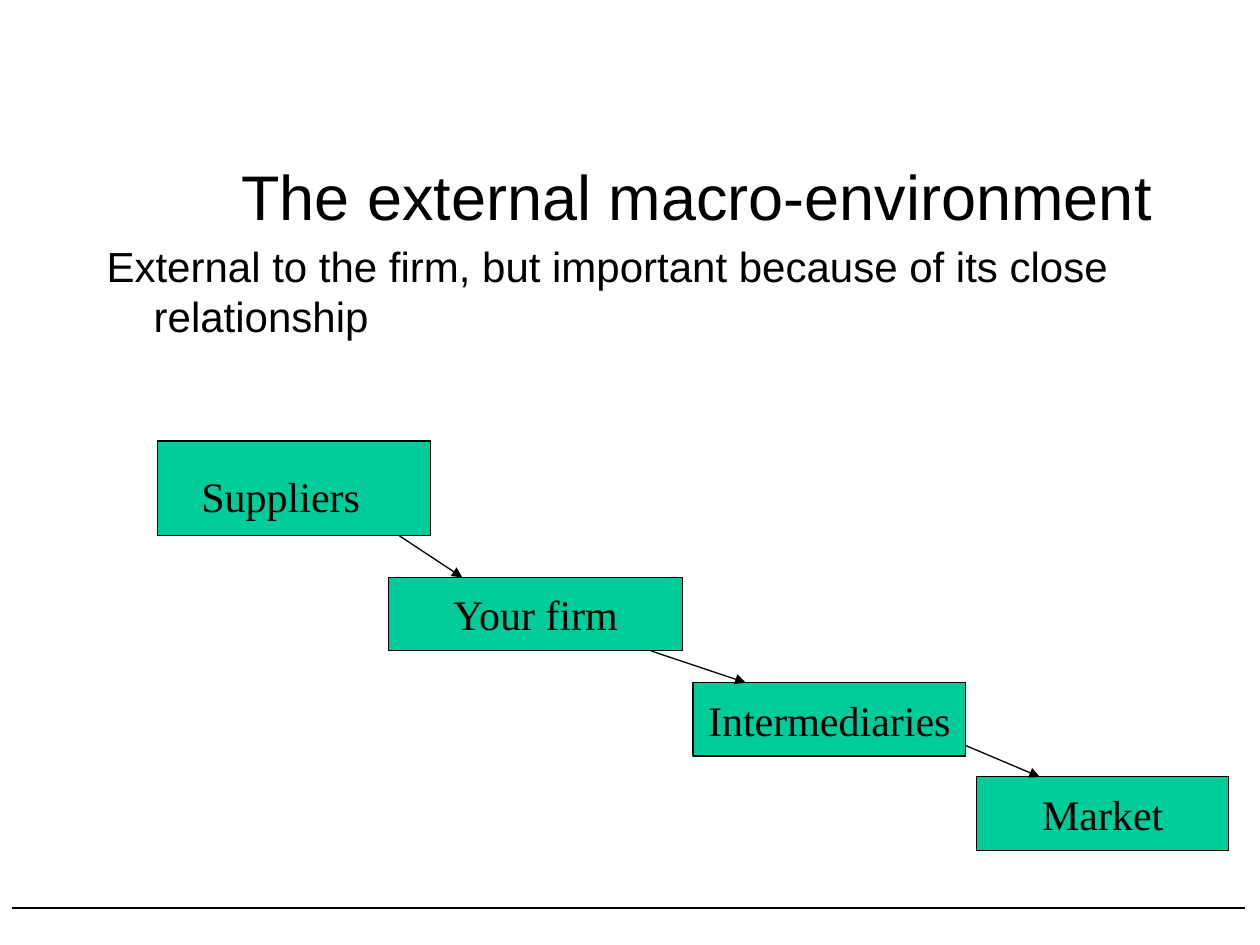
"""Build the slide on the external macro-environment."""
from lxml import etree
from pptx import Presentation
from pptx.dml.color import RGBColor
from pptx.enum import shapes, text
from pptx.oxml import ns
from pptx.util import Cm, Pt


def rgb(value):
    return RGBColor.from_string(value)


def write(sp, content, font, size, align, anchor, wrap):
    tf = sp.text_frame
    tf.text = content
    tf.word_wrap = wrap
    tf.vertical_anchor = anchor
    p = tf.paragraphs[0]
    p.alignment = align
    r = p.runs[0]
    r.font.name = font
    r.font.size = Pt(size)
    r.font.color.rgb = rgb("000000")
    return p


prs = Presentation()
prs.slide_width, prs.slide_height = Cm(25.4), Cm(19.05)
s = prs.slides.add_slide(prs.slide_layouts[6])
left, center = text.PP_ALIGN.LEFT, text.PP_ALIGN.CENTER
top, middle = text.MSO_ANCHOR.TOP, text.MSO_ANCHOR.MIDDLE

title = s.shapes.add_textbox(Cm(3.25), Cm(3.43), Cm(21.59), Cm(1.02))
write(title, "The external macro-environment", "Arial", 36, center, middle, True)

body = s.shapes.add_textbox(Cm(1.9), Cm(4.72), Cm(21.59), Cm(12.27))
body.fill.solid()
body.fill.fore_color.rgb = rgb("FFFFFF")
p = write(body, "External to the firm, but important because of its close relationship",
          "Arial", 24, left, top, True)
pPr = p._p.get_or_add_pPr()
pPr.set("marL", str(Cm(0.95)))
pPr.set("indent", str(-Cm(0.95)))

boxes = [
    ("", 3.18, 8.89, 5.5, 1.9),
    ("Your firm", 7.83, 11.64, 5.93, 1.48),
    ("Intermediaries", 13.97, 13.76, 5.5, 1.48),
    ("Market", 19.69, 15.66, 5.08, 1.48),
]
for label, x, y, w, h in boxes:
    sp = s.shapes.add_shape(shapes.MSO_SHAPE.FLOWCHART_PROCESS, Cm(x), Cm(y), Cm(w), Cm(h))
    sp.shadow.inherit = False
    sp.fill.solid()
    sp.fill.fore_color.rgb = rgb("00CC99")
    sp.line.color.rgb = rgb("000000")
    sp.line.width = Pt(0.75)
    if label:
        write(sp, label, "Times New Roman", 24, center, middle, False)

suppliers = s.shapes.add_textbox(Cm(3.81), Cm(9.36), Cm(3.91), Cm(1.27))
write(suppliers, "Suppliers", "Times New Roman", 24, left, top, True)

lines = [
    (0.25, 18.31, 25.1, 18.31, 1, False),
    (8.05, 10.8, 9.32, 11.64, 0.75, True),
    (13.12, 13.12, 15.03, 13.76, 0.75, True),
    (19.47, 15.03, 20.96, 15.66, 0.75, True),
]
for x1, y1, x2, y2, width, arrow in lines:
    cx = s.shapes.add_connector(shapes.MSO_CONNECTOR.STRAIGHT, Cm(x1), Cm(y1), Cm(x2), Cm(y2))
    cx.line.color.rgb = rgb("000000")
    cx.line.width = Pt(width)
    if arrow:
        etree.SubElement(cx.line._get_or_add_ln(), ns.qn("a:tailEnd"), type="triangle")
    etree.SubElement(cx._element.spPr, ns.qn("a:effectLst"))

prs.save("out.pptx")
